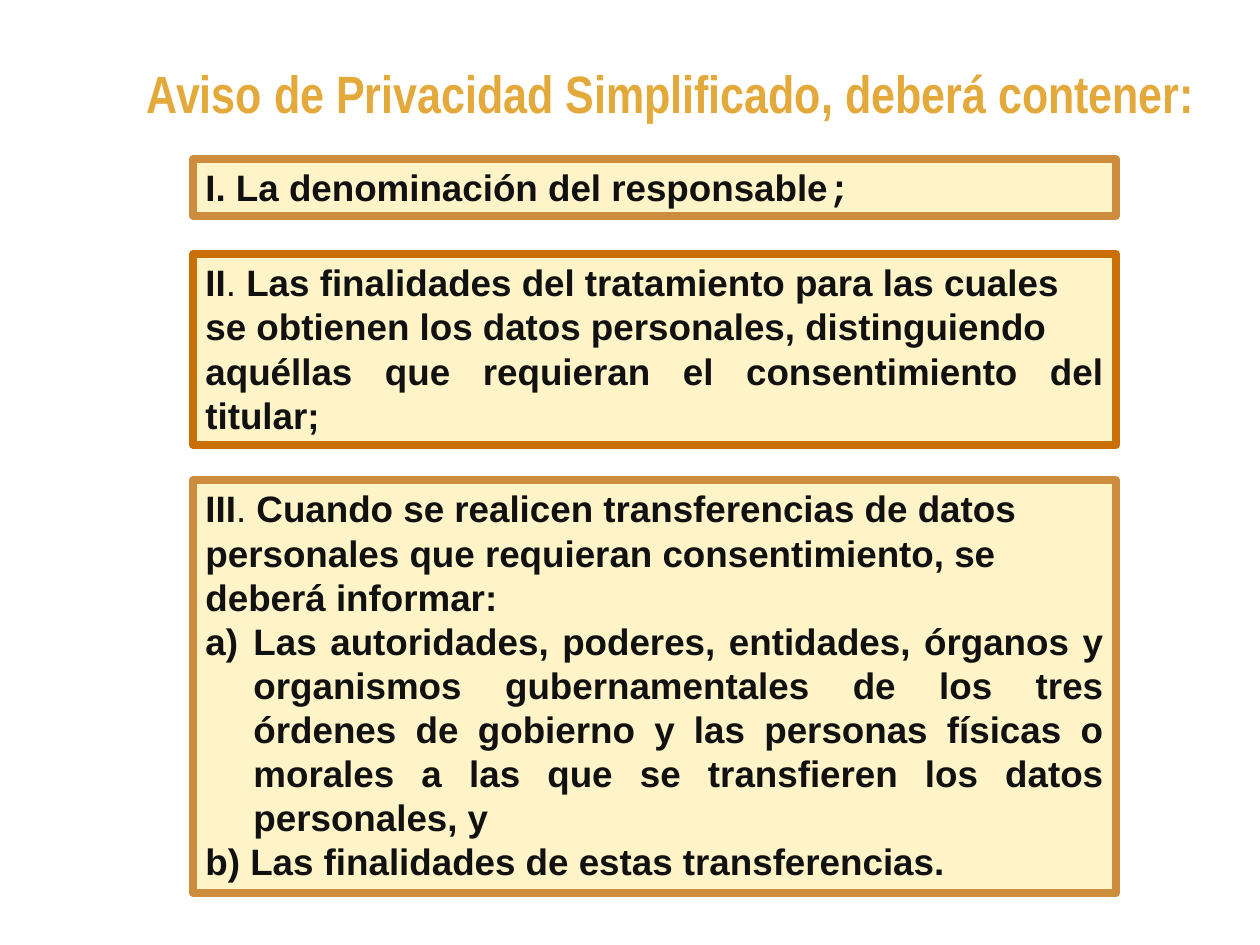
from dataclasses import dataclass, field

from lxml import etree
from pptx import Presentation
from pptx import util as u
from pptx.dml.color import RGBColor
from pptx.enum import shapes, text
from pptx.oxml import ns

SCALE = 914400 / 126  # EMU in one px
LEFT, WIDE = 193, 923
GOLD, TAN, RUST, CREAM, INK = "E3AA3B", "CE8D3E", "CA6F06", "FFF3C8", "111111"
FLUSH, EVEN = text.PP_ALIGN.LEFT, text.PP_ALIGN.JUSTIFY


@dataclass
class Run:
    words: str
    bold: bool = True
    face: str = "Arial"


@dataclass
class Para:
    runs: list[Run]
    align: text.PP_ALIGN = FLUSH
    letter: bool = False


@dataclass
class Box:
    top: int
    high: int
    edge: str
    paras: list[Para] = field(default_factory=list)


def px(n: int) -> u.Emu:
    return u.Emu(round(n * SCALE))


def color(code: str) -> RGBColor:
    return RGBColor.from_string(code)


def item(mark: str, words: str) -> list[Run]:
    """Bold numeral, a plain point, then bold words."""
    return [Run(mark), Run(". ", bold=False), Run(words)]


def add_letter(para) -> None:
    """Number a paragraph a), b)... with a hanging indent."""
    props = para._p.get_or_add_pPr()
    props.set("marL", str(px(48)))
    props.set("indent", str(-px(48)))
    etree.SubElement(props, ns.qn("a:buFont"), typeface="Arial")
    etree.SubElement(props, ns.qn("a:buAutoNum"), type="alphaLcParenR")


def write(para, data: Para) -> None:
    para.alignment = data.align
    if data.letter:
        add_letter(para)
    para.font.size = u.Pt(21)
    para.font.color.rgb = color(INK)
    for part in data.runs:
        run = para.add_run()
        run.text = part.words
        run.font.name = part.face
        run.font.bold = part.bold


def draw(slide, box: Box) -> None:
    rect = slide.shapes.add_shape(shapes.MSO_SHAPE.RECTANGLE, px(LEFT),
                                  px(box.top), px(WIDE), px(box.high))
    rect.shadow.inherit = False
    rect.fill.solid()
    rect.fill.fore_color.rgb = color(CREAM)
    rect.line.color.rgb = color(box.edge)
    rect.line.width = u.Pt(4.33)
    frame = rect.text_frame
    frame.word_wrap = True
    frame.auto_size = text.MSO_AUTO_SIZE.SHAPE_TO_FIT_TEXT
    frame.vertical_anchor = text.MSO_ANCHOR.TOP
    for i, data in enumerate(box.paras):
        write(frame.add_paragraph() if i else frame.paragraphs[0], data)


def head(slide, words: str) -> None:
    title = slide.shapes.title
    title.left, title.top, title.width, title.height = map(
        px, (128, 45, 1086, 96))
    title.text_frame.text = words
    title.text_frame.vertical_anchor = text.MSO_ANCHOR.MIDDLE
    para = title.text_frame.paragraphs[0]
    para.alignment = text.PP_ALIGN.CENTER
    font = para.font
    font.name, font.size, font.bold = "Arial Narrow", u.Pt(30), True
    font.color.rgb = color(GOLD)


BOXES = [
    Box(159, 57, TAN, [
        Para([Run("I. La denominación del responsable"),
              Run(";", face="Courier New")]),
    ]),
    Box(254, 191, RUST, [
        Para(item("II", "Las finalidades del tratamiento para las cuales "),
             EVEN),
        Para([Run("se obtienen los datos personales, distinguiendo ")], EVEN),
        Para([Run("aquéllas que requieran el consentimiento del titular;")],
             EVEN),
    ]),
    Box(480, 413, TAN, [
        Para(item("III", "Cuando se realicen transferencias de datos "
                  "personales que requieran consentimiento, se deberá "
                  "informar:")),
        Para([Run("Las autoridades, poderes, entidades, órganos y organismos "
                  "gubernamentales de los tres órdenes de gobierno y las "
                  "personas físicas o morales a las que se transfieren los "
                  "datos personales, y ")], EVEN, letter=True),
        Para([Run("b) Las finalidades de estas transferencias.")]),
    ]),
]


def main() -> None:
    deck = Presentation()
    deck.slide_width, deck.slide_height = px(1260), px(945)
    slide = deck.slides.add_slide(deck.slide_layouts[5])  # title only
    head(slide, "Aviso de Privacidad Simplificado, deberá contener:")
    for box in BOXES:
        draw(slide, box)
    deck.save("out.pptx")


if __name__ == "__main__":
    main()
